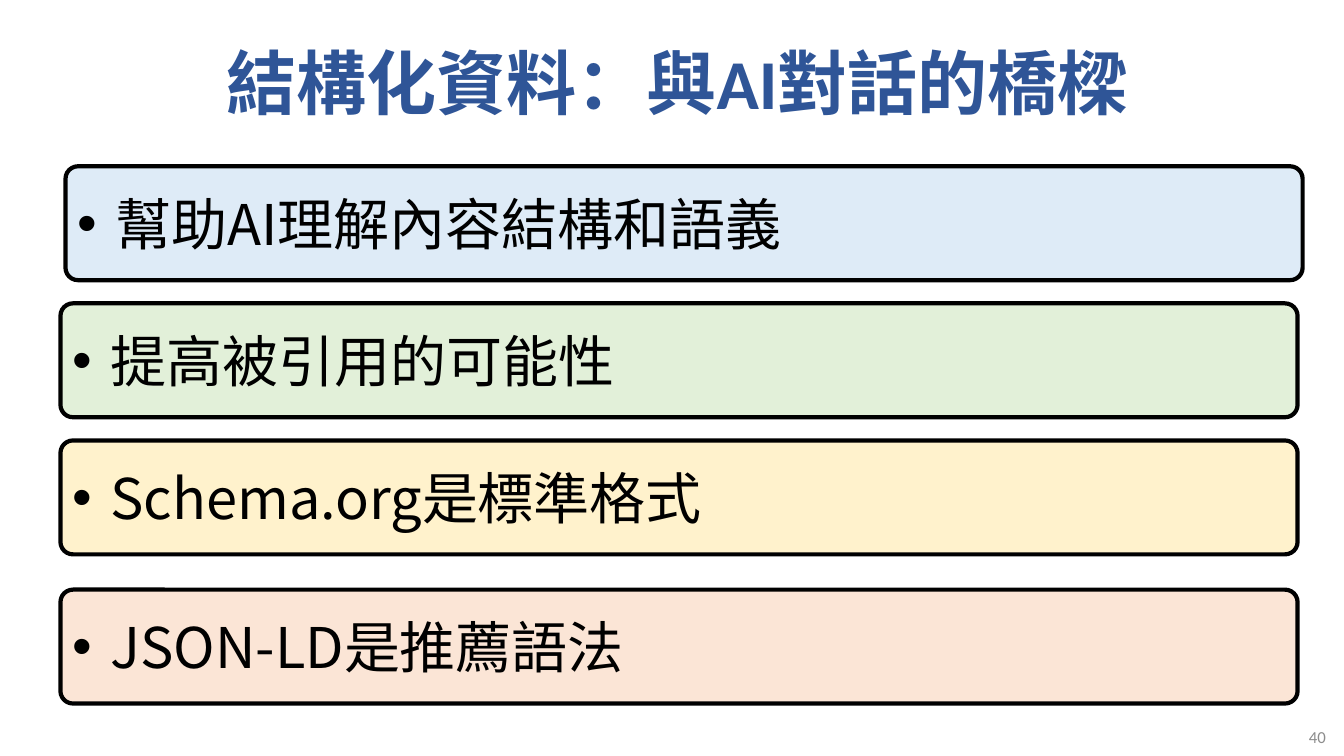
from lxml.etree import SubElement
from pptx import Presentation
from pptx.dml.color import RGBColor
from pptx.enum.shapes import MSO_SHAPE
from pptx.enum.text import MSO_ANCHOR, MSO_AUTO_SIZE, PP_ALIGN
from pptx.oxml.ns import qn
from pptx.util import Pt

PX = 9144
COLORS = {
    "title": "2F5597",
    "number": "8C8C8C",
    "ink": "000000",
    "blue": "DEEBF7",
    "green": "E2F0D9",
    "yellow": "FFF2CC",
    "orange": "FBE5D6",
}


class Deck:
    latin = "Calibri"
    cjk = "Noto Sans CJK SC"

    def __init__(self, width, height):
        self.prs = Presentation()
        self.prs.slide_width = width * PX
        self.prs.slide_height = height * PX
        self.s = self.prs.slides.add_slide(self.prs.slide_layouts[5])

    def color(self, name):
        return RGBColor.from_string(COLORS[name])

    def set_text(self, sp, text, size, color, font, align, bold=False):
        tf = sp.text_frame
        tf.text = text
        tf.word_wrap = True
        tf.auto_size = MSO_AUTO_SIZE.NONE
        tf.vertical_anchor = MSO_ANCHOR.MIDDLE
        p = tf.paragraphs[0]
        p.alignment = align
        r = p.runs[0]
        r.font.size = Pt(size)
        r.font.bold = bold
        r.font.name = font
        r.font.color.rgb = self.color(color)
        SubElement(r._r.get_or_add_rPr(), qn("a:ea"), typeface=self.cjk)
        return p

    def title(self, text, left, top, width, height):
        sp = self.s.shapes.title
        sp.left, sp.top, sp.width, sp.height = (
            v * PX for v in (left, top, width, height))
        self.set_text(sp, text, 50, "title", self.latin, PP_ALIGN.CENTER, True)

    def number(self, text, left, top, width, height):
        sp = self.s.shapes.add_textbox(
            left * PX, top * PX, width * PX, height * PX)
        self.set_text(sp, text, 12, "number", self.latin, PP_ALIGN.RIGHT)

    def card(self, text, fill, left, top, width, height):
        sp = self.s.shapes.add_shape(
            MSO_SHAPE.ROUNDED_RECTANGLE,
            left * PX, top * PX, width * PX, height * PX)
        sp.adjustments[0] = 0.11
        sp.shadow.inherit = False
        sp.fill.solid()
        sp.fill.fore_color.rgb = self.color(fill)
        sp.line.color.rgb = self.color("ink")
        sp.line.width = Pt(3)
        p = self.set_text(sp, text, 40, "ink", self.cjk, PP_ALIGN.LEFT)
        tf = sp.text_frame
        tf.margin_left = tf.margin_right = 8 * PX
        tf.margin_top = tf.margin_bottom = 0
        pPr = p._p.get_or_add_pPr()
        pPr.set("marL", str(38 * PX))
        pPr.set("indent", str(-38 * PX))
        SubElement(pPr, qn("a:buFont"), typeface="Arial")
        SubElement(pPr, qn("a:buChar"), char="•")


def main():
    deck = Deck(1333, 750)
    deck.title("結構化資料：與AI對話的橋樑", 58, 15, 1227, 131)
    deck.number("40", 1220, 718, 105, 26)
    cards = [
        ("幫助AI理解內容結構和語義", "blue", 65, 165),
        ("提高被引用的可能性", "green", 60, 301),
        ("Schema.org是標準格式", "yellow", 60, 437),
        ("JSON-LD是推薦語法", "orange", 60, 585),
    ]
    for text, fill, left, top in cards:
        deck.card(text, fill, left, top, 1227, 113)
    deck.prs.save("out.pptx")


if __name__ == "__main__":
    main()
